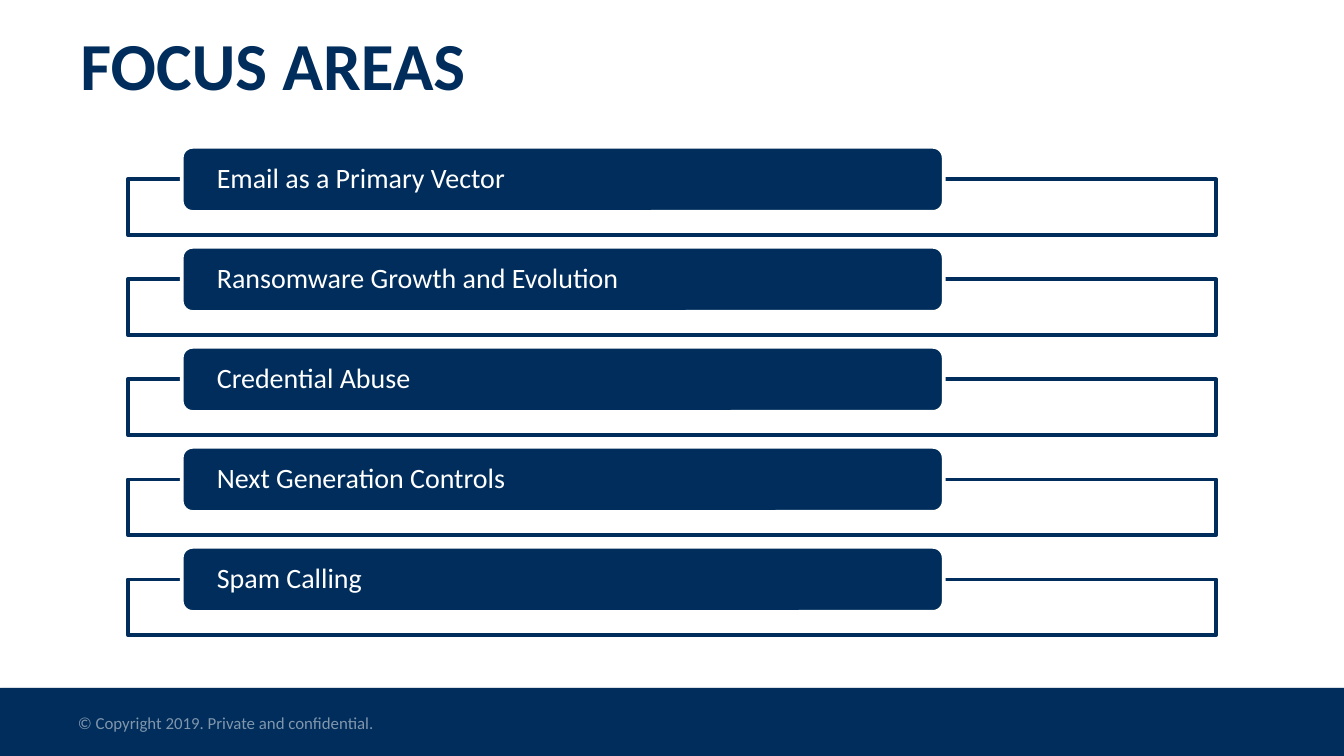
from dataclasses import dataclass

from lxml.etree import SubElement
from pptx import Presentation
from pptx.dml.color import RGBColor
from pptx.enum.shapes import MSO_SHAPE
from pptx.enum.text import MSO_ANCHOR, PP_ALIGN
from pptx.oxml.ns import qn
from pptx.util import Pt


@dataclass(frozen=True)
class Theme:
    font: str = "Calibri"
    navy: RGBColor = RGBColor(0x00, 0x2D, 0x5B)
    white: RGBColor = RGBColor(0xFF, 0xFF, 0xFF)
    muted: RGBColor = RGBColor(0x80, 0x96, 0xAD)
    title_size: int = 36
    label_size: int = 15
    footer_size: int = 9
    line_width: int = 2


THEME = Theme()
SLIDE_W, SLIDE_H = 720, 405
FOOTER_TOP = 368.5
FIRST_TOP, ROW_STEP = 78.7, 53.57
LABEL_H = 34.87
FOCUS_AREAS = [
    "Email as a Primary Vector",
    "Ransomware Growth and Evolution",
    "Credential Abuse",
    "Next Generation Controls",
    "Spam Calling",
]


def add_box(slide, kind, left, top, width, height, fill, line=None):
    sp = slide.shapes.add_shape(kind, Pt(left), Pt(top), Pt(width), Pt(height))
    sp.shadow.inherit = False
    sp.fill.solid()
    sp.fill.fore_color.rgb = fill
    if line is None:
        sp.line.fill.background()
    else:
        sp.line.color.rgb = line
        sp.line.width = Pt(THEME.line_width)
    return sp


def set_alpha(color, percent):
    SubElement(color, qn("a:alpha"), val=str(percent * 1000))


def add_shadow(sp):
    effects = sp._element.spPr.find(qn("a:effectLst"))
    shadow = SubElement(effects, qn("a:outerShdw"), blurRad=str(Pt(3.1)),
                        dist=str(Pt(1.8)), dir="5400000", rotWithShape="0")
    set_alpha(SubElement(shadow, qn("a:srgbClr"), val="000000"), 35)


def write(sp, text, size, color, bold=False, spacing=None):
    tf = sp.text_frame
    tf.word_wrap = True
    tf.vertical_anchor = MSO_ANCHOR.MIDDLE
    p = tf.paragraphs[0]
    p.text = text
    p.alignment = PP_ALIGN.LEFT
    p.line_spacing = spacing
    p.font.name = THEME.font
    p.font.size = Pt(size)
    p.font.bold = bold
    p.font.color.rgb = color


def add_text(slide, left, top, width, height, *args, **kwargs):
    sp = slide.shapes.add_textbox(Pt(left), Pt(top), Pt(width), Pt(height))
    write(sp, *args, **kwargs)


def add_footer(slide):
    bar = add_box(slide, MSO_SHAPE.RECTANGLE, 0, FOOTER_TOP, SLIDE_W,
                  SLIDE_H - FOOTER_TOP, THEME.navy)
    add_shadow(bar)
    add_text(slide, 34.6, 378, 243.4, 18,
             "© Copyright 2019. Private and confidential.",
             THEME.footer_size, THEME.muted)


def add_focus_area(slide, top, text):
    frame = add_box(slide, MSO_SHAPE.RECTANGLE, 68.4, top + LABEL_H / 2,
                    583.2, 29.75, THEME.white, THEME.navy)
    set_alpha(frame._element.spPr.find(qn("a:solidFill"))[0], 90)
    label = add_box(slide, MSO_SHAPE.ROUNDED_RECTANGLE, 97.4, top, 408.2,
                    LABEL_H, THEME.navy, THEME.white)
    tf = label.text_frame
    tf.margin_left = tf.margin_right = Pt(17.1)
    tf.margin_top = tf.margin_bottom = 0
    write(label, text, THEME.label_size, THEME.white, spacing=0.9)


def main():
    prs = Presentation()
    prs.slide_width, prs.slide_height = Pt(SLIDE_W), Pt(SLIDE_H)
    slide = prs.slides.add_slide(prs.slide_layouts[6])
    add_footer(slide)
    for i, text in enumerate(FOCUS_AREAS):
        add_focus_area(slide, FIRST_TOP + i * ROW_STEP, text)
    add_text(slide, 36, 10.8, 648, 54.7, "FOCUS AREAS", THEME.title_size,
             THEME.navy, bold=True, spacing=0.8)
    prs.save("out.pptx")


if __name__ == "__main__":
    main()
